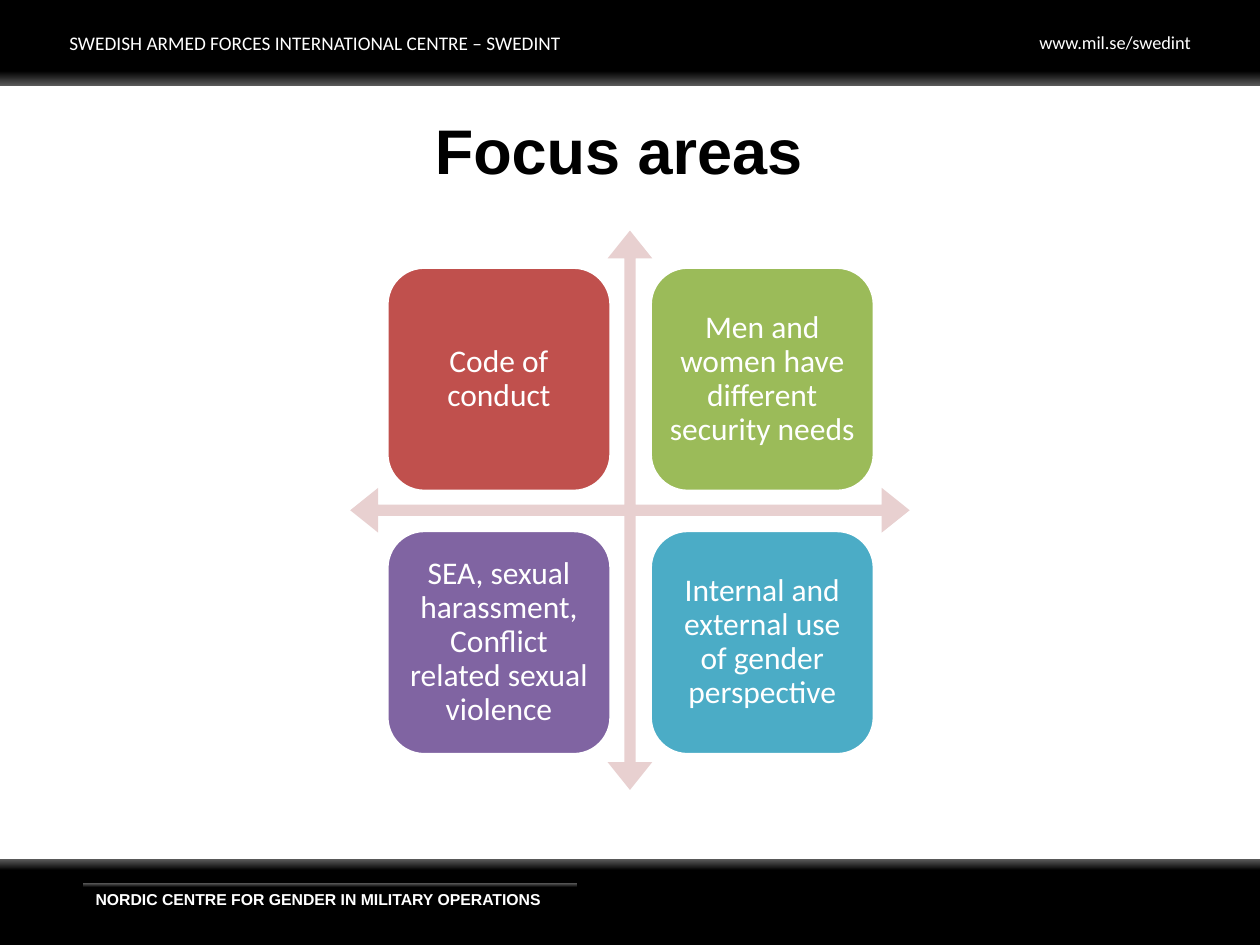
"""Build the "Focus areas" slide with a four-box matrix."""
from pptx import Presentation
from pptx.dml.color import RGBColor
from pptx.enum.shapes import MSO_SHAPE
from pptx.enum.text import MSO_ANCHOR, PP_ALIGN
from pptx.util import Inches, Pt

RECT = MSO_SHAPE.RECTANGLE
ROUND = MSO_SHAPE.ROUNDED_RECTANGLE
QUAD_ARROW = MSO_SHAPE.QUAD_ARROW
TOP, MIDDLE = MSO_ANCHOR.TOP, MSO_ANCHOR.MIDDLE
LEFT, CENTER = PP_ALIGN.LEFT, PP_ALIGN.CENTER

BLACK, GREY, WHITE = "000000", "595959", "FFFFFF"


def add_shape(kind, x, y, w, h, fill=None, stops=None, line=None):
    sp = s.shapes.add_shape(kind, Inches(x), Inches(y), Inches(w), Inches(h))
    sp.shadow.inherit = False
    if stops:
        sp.fill.gradient()
        sp.fill.gradient_angle = 270
        for stop, (position, color) in zip(sp.fill.gradient_stops, stops):
            stop.position = position
            stop.color.rgb = RGBColor.from_string(color)
    else:
        sp.fill.solid()
        sp.fill.fore_color.rgb = RGBColor.from_string(fill)
    if line:
        sp.line.color.rgb = RGBColor.from_string(line)
        sp.line.width = Pt(2)
    else:
        sp.line.fill.background()
    return sp


def add_text(sp, text, size, font="Calibri", color=WHITE, bold=False,
             align=LEFT, anchor=TOP, inset=None, spacing=None):
    tf = sp.text_frame
    tf.word_wrap = True
    tf.vertical_anchor = anchor
    if inset is not None:
        tf.margin_left = tf.margin_right = Inches(inset)
        tf.margin_top = tf.margin_bottom = Inches(inset)
    p = tf.paragraphs[0]
    p.alignment = align
    if spacing:
        p.line_spacing = spacing
    r = p.add_run()
    r.text = text
    r.font.size = Pt(size)
    r.font.name = font
    r.font.bold = bold
    r.font.color.rgb = RGBColor.from_string(color)


prs = Presentation()
prs.slide_width, prs.slide_height = Inches(10), Inches(7.5)
s = prs.slides.add_slide(prs.slide_layouts[6])

header_stops = [(0.83, BLACK), (1, GREY)]
footer_stops = [(0, GREY), (0.13, BLACK)]

add_shape(RECT, -0.04, 0, 10.04, 0.68, stops=header_stops)
header = add_shape(RECT, 0.51, 0.17, 4.8, 0.34, fill=BLACK, line=BLACK)
add_text(header, "SWEDISH ARMED FORCES INTERNATIONAL CENTRE – SWEDINT", 11,
         anchor=MIDDLE, inset=0.04)

add_shape(RECT, 0, 6.82, 10, 0.68, stops=footer_stops)
footer = add_shape(RECT, 0.66, 7.01, 3.92, 0.25, stops=footer_stops)
add_text(footer, "NORDIC CENTRE FOR GENDER IN MILITARY OPERATIONS", 9,
         font="Arial", bold=True)

website = s.shapes.add_textbox(Inches(8.15), Inches(0.2), Inches(1.57), Inches(0.29))
add_text(website, "www.mil.se/swedint", 10.5)

title = s.shapes.add_textbox(Inches(1.5), Inches(0.84), Inches(6.82), Inches(0.69))
add_text(title, "Focus areas", 36, font="Arial", color=BLACK, bold=True,
         align=CENTER, anchor=MIDDLE)

arrows = add_shape(QUAD_ARROW, 2.78, 1.83, 4.44, 4.44, fill="E8D0D0")
for i, value in enumerate((0.02, 0.04, 0.05)):
    arrows.adjustments[i] = value

areas = [
    ("Code of conduct", "C0504D"),
    ("Men and women have different security needs", "9BBB59"),
    ("SEA, sexual harassment, Conflict related sexual violence", "8064A2"),
    ("Internal and external use of gender perspective", "4BACC6"),
]
box, pitch = 1.78, 2.09
for i, (text, color) in enumerate(areas):
    row, col = divmod(i, 2)
    sp = add_shape(ROUND, 3.07 + col * pitch, 2.12 + row * pitch, box, box,
                   fill=color, line=WHITE)
    add_text(sp, text, 18, align=CENTER, anchor=MIDDLE, inset=0.07, spacing=0.9)

prs.save("out.pptx")
